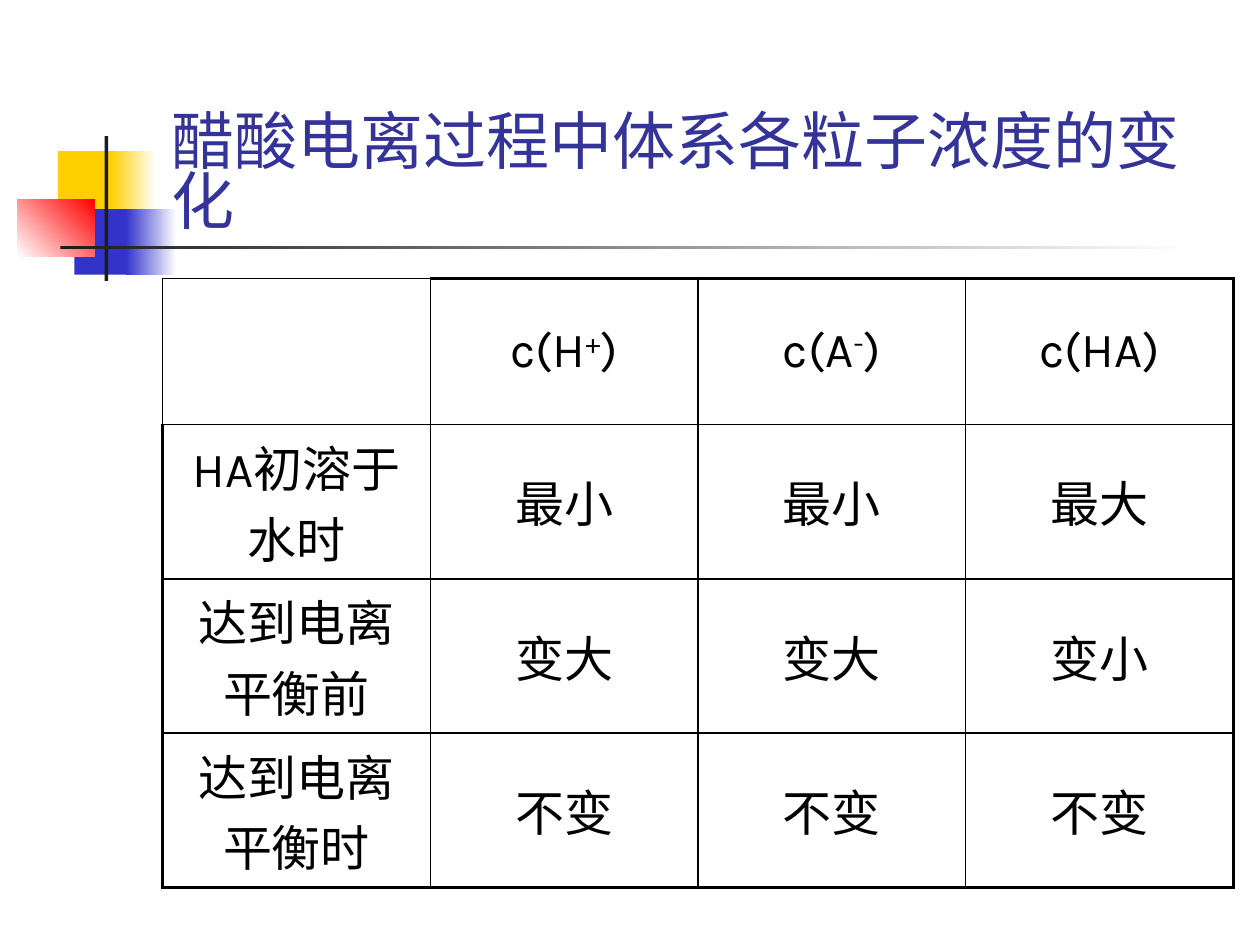
from lxml import etree
from pptx import Presentation
from pptx.dml.color import RGBColor
from pptx.enum.shapes import MSO_SHAPE
from pptx.enum.text import MSO_ANCHOR, PP_ALIGN
from pptx.oxml.ns import qn
from pptx.util import Inches, Pt

FONT = "Karla"
COLORS = {
    "yellow": "FFCF01", "blue": "3333CC", "red": "FF0000", "dark": "1C1C1C",
    "white": "FFFFFF", "title": "333399", "black": "000000",
}
TITLE = "醋酸电离过程中体系各粒子浓度的变化"
TITLE_BOX = (1.26, 0.68, 8.52, 1.25)

# Box, colours (one is solid, two is a gradient), gradient angle
DECORATION = [
    ((0.46, 1.2, 0.48, 0.52), ["yellow"], 0),
    ((0.88, 1.2, 0.36, 0.52), ["yellow", "white"], 0),
    ((0.59, 1.66, 0.46, 0.52), ["blue"], 0),
    ((1, 1.66, 0.4, 0.52), ["blue", "white"], 0),
    ((0.14, 1.58, 0.61, 0.46), ["white", "red"], 45),
    ((0.83, 1.08, 0.03, 1.15), ["dark"], 0),
    ((0.48, 1.95, 9, 0.03), ["dark", "white"], 0),
]

# Each cell is a list of (text, is superscript)
HEADER = [
    [],
    [("c(H", False), ("+", True), (")", False)],
    [("c(A", False), ("-", True), (")", False)],
    [("c(HA)", False)],
]
STAGES = [
    ("HA初溶于水时", "最小", "最小", "最大"),
    ("达到电离平衡前", "变大", "变大", "变小"),
    ("达到电离平衡时", "不变", "不变", "不变"),
]
ROWS = [HEADER] + [[[(text, False)] for text in stage] for stage in STAGES]
TABLE_BOX = (1.29, 2.21, 8.5, 4.5)
ROW_HEIGHTS = [1.16, 1.11, 1.11, 1.11]
THIN, THICK = 1, 2.25


def color(name):
    return RGBColor.from_string(COLORS[name])


def inches(box):
    return [Inches(length) for length in box]


def format_font(font, size, color_name):
    for key, value in {"name": FONT, "size": Pt(size), "bold": False}.items():
        setattr(font, key, value)
    font.color.rgb = color(color_name)


def add_decoration(slide, box, names, angle):
    block = slide.shapes.add_shape(MSO_SHAPE.RECTANGLE, *inches(box))
    block.shadow.inherit = False
    block.line.fill.background()
    if len(names) == 1:
        block.fill.solid()
        block.fill.fore_color.rgb = color(names[0])
    else:
        block.fill.gradient()
        block.fill.gradient_angle = angle
        for stop, name in zip(block.fill.gradient_stops, names):
            stop.color.rgb = color(name)


def set_borders(cell, widths):
    properties = cell._tc.get_or_add_tcPr()
    for position, (side, width) in enumerate(widths.items()):
        line = etree.Element(qn(f"a:ln{side}"), w=str(int(Pt(width))))
        fill = etree.SubElement(line, qn("a:solidFill"))
        etree.SubElement(fill, qn("a:srgbClr"), val=COLORS["black"])
        properties.insert(position, line)


def add_concentration_table(slide):
    last_row, last_column = len(ROWS) - 1, len(HEADER) - 1
    table = slide.shapes.add_table(len(ROWS), len(HEADER), *inches(TABLE_BOX)).table
    table.first_row = table.horz_banding = False
    for row, height in zip(table.rows, ROW_HEIGHTS):
        row.height = Inches(height)
    for r, contents in enumerate(ROWS):
        for c, runs in enumerate(contents):
            cell = table.cell(r, c)
            cell.vertical_anchor = MSO_ANCHOR.MIDDLE
            cell.fill.background()
            outer = {"L": c == 0 and r > 0, "R": c == last_column,
                     "T": r == 0 and c > 0, "B": r == last_row}
            set_borders(cell, {side: THICK if edge else THIN
                               for side, edge in outer.items()})
            paragraph = cell.text_frame.paragraphs[0]
            paragraph.alignment = PP_ALIGN.CENTER
            for text, superscript in runs:
                run = paragraph.add_run()
                run.text = text
                format_font(run.font, 28, "black")
                if superscript:
                    run.font._element.set("baseline", "30000")


def add_title(slide):
    title = slide.shapes.title
    title.left, title.top, title.width, title.height = inches(TITLE_BOX)
    title.text_frame.text = TITLE
    title.text_frame.vertical_anchor = MSO_ANCHOR.BOTTOM
    paragraph = title.text_frame.paragraphs[0]
    paragraph.alignment = PP_ALIGN.LEFT
    paragraph.line_spacing = 0.8
    format_font(paragraph.runs[0].font, 36, "title")


def main():
    presentation = Presentation()
    presentation.slide_width, presentation.slide_height = Inches(10), Inches(7.5)
    slide = presentation.slides.add_slide(presentation.slide_layouts[5])
    for box, names, angle in DECORATION:
        add_decoration(slide, box, names, angle)
    add_title(slide)
    add_concentration_table(slide)
    presentation.save("out.pptx")


if __name__ == "__main__":
    main()
